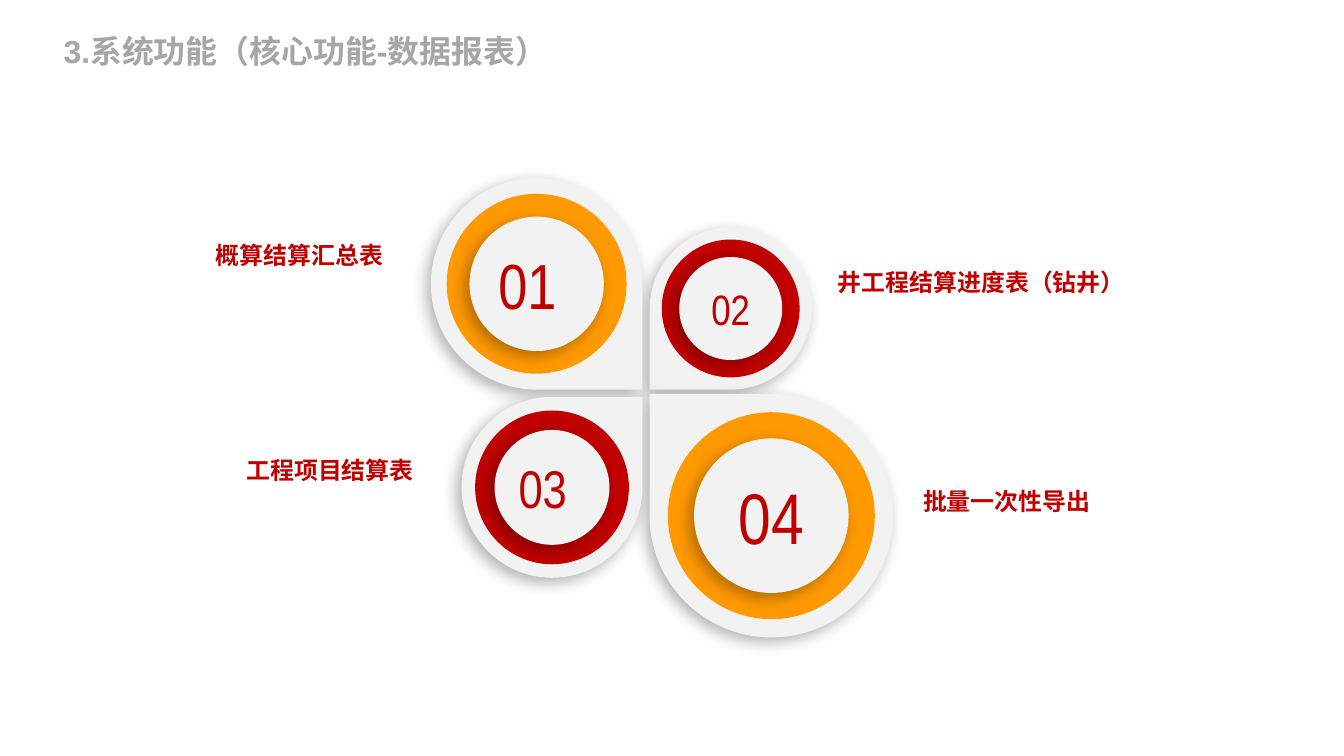
from pptx import Presentation
from pptx.dml.color import RGBColor
from pptx.enum.shapes import MSO_SHAPE as SHAPE
from pptx.enum.text import MSO_ANCHOR as ANCHOR, PP_ALIGN as ALIGN
from pptx.oxml import parse_xml
from pptx.oxml.ns import nsdecls
from pptx.util import Pt

RED = RGBColor(0xC0, 0x00, 0x00)
ORANGE = RGBColor(0xFF, 0x99, 0x00)
PALE = RGBColor(0xF2, 0xF2, 0xF2)
GRAY = RGBColor(0xA6, 0xA6, 0xA6)
CJK = "Noto Sans CJK SC"

RING, HUB = 0.85, 0.635  # diameters relative to the petal

# number, size, tip x, tip y, side x, side y, rotation, ring, font size, right inset
PETALS = [
    ("02", 122.2, 489.4, 293.5, 1, -1, 180, RED, 32, 0),
    ("01", 159.4, 484, 293.5, -1, -1, 90, ORANGE, 48, 14),
    ("04", 183.4, 489.4, 296.8, 1, 1, 270, ORANGE, 54, 0),
    ("03", 136.3, 484, 299, -1, 1, 0, RED, 40, 14),
]

# text, left, top, width
LABELS = [
    ("概算结算汇总表", 155.5, 178, 142),
    ("井工程结算进度表（钻井）", 624.2, 198, 232.5),
    ("工程项目结算表", 178.5, 340, 142),
    ("批量一次性导出", 688.3, 363, 142),
]


def style_text(tf, size, font, color, bold=False):
    f = tf.paragraphs[0].runs[0].font
    f.size, f.name, f.bold = Pt(size), font, bold
    f.color.rgb = color
    f._element.append(parse_xml(f'<a:ea {nsdecls("a")} typeface="{CJK}"/>'))


def set_insets(tf, left=0, top=0, right=0, bottom=0):
    tf.margin_left, tf.margin_top = Pt(left), Pt(top)
    tf.margin_right, tf.margin_bottom = Pt(right), Pt(bottom)


def add_shadow(sp):
    sp._element.spPr.append(parse_xml(
        f'<a:effectLst {nsdecls("a")}>'
        f'<a:outerShdw blurRad="{Pt(12)}" dist="{Pt(5)}" dir="8100000" '
        'algn="tr" rotWithShape="0"><a:srgbClr val="000000">'
        '<a:alpha val="30000"/></a:srgbClr></a:outerShdw></a:effectLst>'))


def add_disc(group, kind, cx, cy, size, color, shadow=True):
    sp = group.shapes.add_shape(
        kind, Pt(cx - size / 2), Pt(cy - size / 2), Pt(size), Pt(size))
    sp.fill.solid()
    sp.fill.fore_color.rgb = color
    sp.line.fill.background()
    if shadow:
        add_shadow(sp)
    else:
        sp.shadow.inherit = False
    return sp


def add_petal(s, number, size, tip_x, tip_y, side_x, side_y, rotation,
              ring_color, font_size, right_inset):
    group = s.shapes.add_group_shape()
    cx, cy = tip_x + side_x * size / 2, tip_y + side_y * size / 2
    petal = add_disc(group, SHAPE.TEAR, cx, cy, size, PALE)
    petal.rotation = rotation
    add_disc(group, SHAPE.OVAL, cx, cy, size * RING, ring_color, shadow=False)
    hub = add_disc(group, SHAPE.OVAL, cx, cy, size * HUB, PALE)
    tf = hub.text_frame
    tf.text = number
    tf.word_wrap = True
    tf.vertical_anchor = ANCHOR.MIDDLE
    tf.paragraphs[0].alignment = ALIGN.CENTER
    set_insets(tf, right=right_inset)
    style_text(tf, font_size, "Arial Narrow", RED)


def add_text(s, text, left, top, width, size, font, color):
    tb = s.shapes.add_textbox(Pt(left), Pt(top), Pt(width), Pt(29))
    tf = tb.text_frame
    tf.text = text
    tf.word_wrap = False
    style_text(tf, size, font, color, bold=True)
    return tf


def main():
    prs = Presentation()
    prs.slide_width, prs.slide_height = Pt(1012.5), Pt(569.5)
    s = prs.slides.add_slide(prs.slide_layouts[6])

    # Title
    title = add_text(s, "3.系统功能（核心功能-数据报表）", 48, 23.8, 392.4,
                     24, "Arial", GRAY)
    title.vertical_anchor = ANCHOR.MIDDLE
    set_insets(title)

    # Four numbered petals
    for petal in PETALS:
        add_petal(s, *petal)

    # Report names
    for label in LABELS:
        add_text(s, *label, 18, CJK, RED)

    prs.save("out.pptx")


if __name__ == "__main__":
    main()
